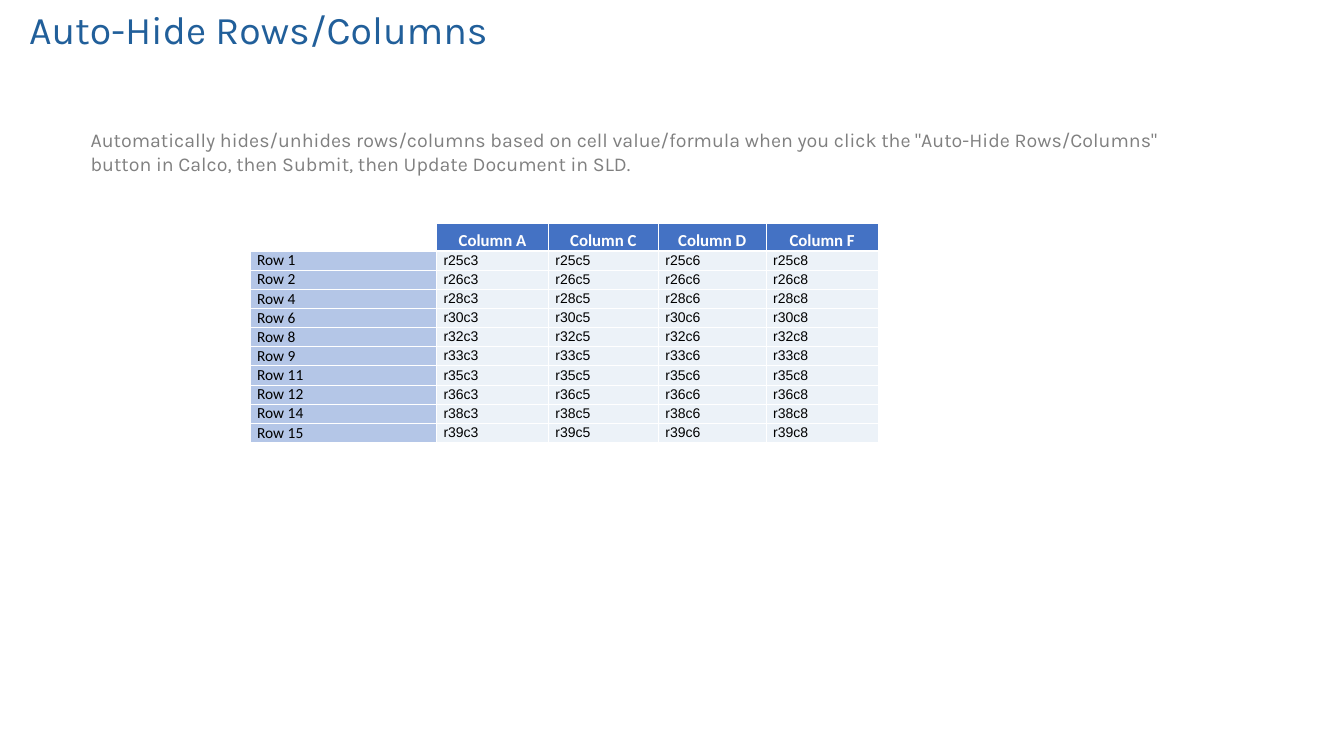
from lxml import etree
from pptx import Presentation
from pptx.dml.color import RGBColor
from pptx.enum.text import MSO_ANCHOR, PP_ALIGN
from pptx.oxml.ns import qn
from pptx.util import Inches, Pt

CENTER, LEFT = PP_ALIGN.CENTER, PP_ALIGN.LEFT
TOP, MIDDLE, BOTTOM = MSO_ANCHOR.TOP, MSO_ANCHOR.MIDDLE, MSO_ANCHOR.BOTTOM

TITLE_BLUE = RGBColor(0x21, 0x5F, 0x9A)
GRAY = RGBColor(0x80, 0x80, 0x80)
HEADER_BLUE = RGBColor(0x44, 0x72, 0xC4)
LABEL_BLUE = RGBColor(0xB4, 0xC6, 0xE7)
DATA_BLUE = RGBColor(0xEC, 0xF2, 0xF8)
WHITE = RGBColor(0xFF, 0xFF, 0xFF)
BLACK = RGBColor(0, 0, 0)

# Visible rows and columns, with the sheet positions their cell names use
ROW_NUMBERS = [1, 2, 4, 6, 8, 9, 11, 12, 14, 15]
SHEET_ROW_OFFSET = 24
SHEET_COLUMNS = {"A": 3, "C": 5, "D": 6, "F": 8}
COLUMN_WIDTHS = [1.85, 1.11, 1.09, 1.07, 1.11]
HEADER_HEIGHT, ROW_HEIGHT = 0.27, 0.19

DESCRIPTION = (
    "Automatically hides/unhides rows/columns based on cell value/formula when "
    'you click the "Auto-Hide Rows/Columns" button in Calco, then Submit, then '
    "Update Document in SLD."
)


def set_font(para, name, size, color, bold=False):
    para.font.name = name
    para.font.size = Pt(size)
    para.font.color.rgb = color
    para.font.bold = bold


def add_text(page, place, text, size, color, anchor=TOP, spacing=1.0):
    box = page.shapes.add_textbox(*(Inches(length) for length in place))
    frame = box.text_frame
    frame.word_wrap = True
    frame.vertical_anchor = anchor
    para = frame.paragraphs[0]
    para.text = text
    para.line_spacing = spacing
    set_font(para, "Karla", size, color)


def set_borders(cell, width, top_width):
    properties = cell._tc.get_or_add_tcPr()
    widths = {"a:lnL": width, "a:lnR": width, "a:lnT": top_width, "a:lnB": width}
    for index, (tag, points) in enumerate(widths.items()):
        line = etree.Element(qn(tag), w=str(Pt(points)))
        fill = etree.SubElement(line, qn("a:solidFill"))
        etree.SubElement(fill, qn("a:srgbClr"), val=str(WHITE))
        properties.insert(index, line)


def fill_cell(cell, text, fill, font, align=LEFT, anchor=MIDDLE):
    cell.margin_left = cell.margin_right = Inches(0.07)
    cell.margin_top = cell.margin_bottom = 0
    cell.vertical_anchor = anchor
    cell.fill.solid()
    cell.fill.fore_color.rgb = fill
    para = cell.text_frame.paragraphs[0]
    para.text = text
    para.alignment = align
    set_font(para, *font)


def add_row_table(page, left, top):
    height = HEADER_HEIGHT + ROW_HEIGHT * len(ROW_NUMBERS)
    frame = page.shapes.add_table(
        len(ROW_NUMBERS) + 1, len(COLUMN_WIDTHS),
        Inches(left), Inches(top), Inches(sum(COLUMN_WIDTHS)), Inches(height))
    table = frame.table
    table.horz_banding = False
    for column, width in zip(table.columns, COLUMN_WIDTHS):
        column.width = Inches(width)
    for index, row in enumerate(table.rows):
        row.height = Inches(ROW_HEIGHT if index else HEADER_HEIGHT)

    # Header, with an empty corner
    header_font = ("Calibri", 12, WHITE, True)
    fill_cell(table.cell(0, 0), "", WHITE, header_font)
    for column, letter in enumerate(SHEET_COLUMNS, 1):
        fill_cell(table.cell(0, column), f"Column {letter}", HEADER_BLUE,
                  header_font, CENTER, BOTTOM)

    # Row labels and cell names
    for row, number in enumerate(ROW_NUMBERS, 1):
        fill_cell(table.cell(row, 0), f"Row {number}", LABEL_BLUE,
                  ("Calibri", 11, BLACK))
        for column, sheet_column in enumerate(SHEET_COLUMNS.values(), 1):
            name = f"r{number + SHEET_ROW_OFFSET}c{sheet_column}"
            fill_cell(table.cell(row, column), name, DATA_BLUE,
                      ("Arial", 10, BLACK))

    # White rules, heavier around the header
    for row in range(len(table.rows)):
        for column in range(len(table.columns)):
            set_borders(table.cell(row, column), 0.5 if row else 1,
                        1 if row <= 1 and column else 0.5)


def main():
    deck = Presentation()
    deck.slide_width, deck.slide_height = Inches(13.33), Inches(7.5)
    page = deck.slides.add_slide(deck.slide_layouts[6])
    add_row_table(page, 2.48, 2.22)
    add_text(page, (0.8, 1.22, 11.06, 0.57), DESCRIPTION, 14, GRAY)
    add_text(page, (0.19, 0, 11.5, 0.64), "Auto-Hide Rows/Columns", 28,
             TITLE_BLUE, MIDDLE, 0.9)
    deck.save("out.pptx")


if __name__ == "__main__":
    main()
